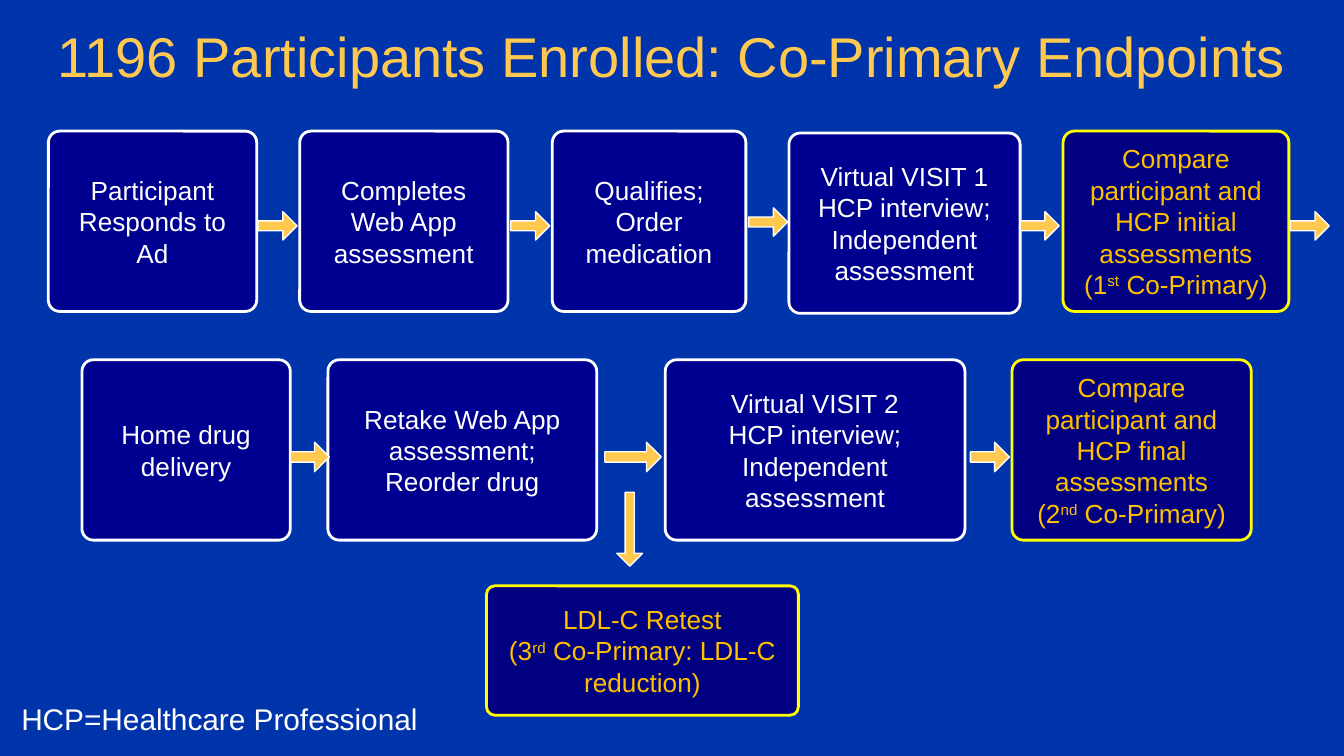
from pptx import Presentation
from pptx.dml.color import RGBColor as RGB
from pptx.enum.shapes import MSO_SHAPE as SHAPE
from pptx.enum.text import MSO_ANCHOR as ANCHOR, MSO_AUTO_SIZE as FIT, PP_ALIGN as ALIGN
from pptx.util import Inches, Pt

COLORS = {
    "background": "0034AA", "title": "FFC850", "white": "FFFFFF",
    "step": "000090", "endpoint": "000080", "endpoint_line": "FFFF00",
    "endpoint_text": "FFC000", "arrow": "FFC94F",
}
COLORS = {name: RGB.from_string(value) for name, value in COLORS.items()}

prs = Presentation()
prs.slide_width = Inches(10)
prs.slide_height = prs.slide_width * 9 // 16
COL, ROW = prs.slide_width / 100, prs.slide_height / 100  # 1 % of the slide
s = prs.slides.add_slide(prs.slide_layouts[6])
s.background.fill.solid()
s.background.fill.fore_color.rgb = COLORS["background"]


def add_block(kind, x, y, w, h, fill, line, weight, adjustments):
    """Add a filled preset shape, placed in percent of the slide."""
    sp = s.shapes.add_shape(kind, int(x * COL), int(y * ROW), int(w * COL), int(h * ROW))
    sp.shadow.inherit = False
    sp.fill.solid()
    sp.fill.fore_color.rgb = COLORS[fill]
    sp.line.color.rgb = COLORS[line]
    sp.line.width = Pt(weight)
    for i, value in enumerate(adjustments):
        sp.adjustments[i] = value
    return sp


def write(sp, text, size, color, align, **frame):
    """Write one paragraph per line; text between carets is superscript."""
    tf = sp.text_frame
    for name, value in ({"word_wrap": True} | frame).items():
        setattr(tf, name, value)
    for i, line in enumerate(text.split("\n")):
        p = tf.add_paragraph() if i else tf.paragraphs[0]
        p.alignment = align
        for j, part in enumerate(line.split("^")):
            r = p.add_run()
            r.text = part
            r.font.name, r.font.size = "Arial", Pt(size)
            r.font.color.rgb = COLORS[color]
            if j % 2:
                r._r.get_or_add_rPr().set("baseline", "30000")


# Process boxes: left, top, width, height, style, text
TOP, MIDDLE, BOTTOM, BOX_H = 17.35, 47.6, 77.5, 23.85
STYLES = {
    "step": ("step", "white", "white"),
    "endpoint": ("endpoint", "endpoint_line", "endpoint_text"),
}
BOXES = [
    (3.6, TOP, 15.5, BOX_H, "step", "Participant Responds to Ad"),
    (22.3, TOP, 15.5, BOX_H, "step", "Completes Web App assessment"),
    (41.1, TOP, 14.4, BOX_H, "step", "Qualifies; Order medication"),
    (58.7, TOP + 0.25, 17.2, BOX_H, "step",
     "Virtual VISIT 1\nHCP interview; Independent assessment"),
    (79.1, TOP, 16.8, BOX_H, "endpoint",
     "Compare participant and HCP initial assessments\n(1^st^ Co-Primary)"),
    (6.1, MIDDLE, 15.5, BOX_H, "step", "Home drug delivery"),
    (24.4, MIDDLE, 20, BOX_H, "step", "Retake Web App assessment; Reorder drug"),
    (36.2, BOTTOM, 23.2, 17.1, "endpoint",
     "LDL-C Retest\n(3^rd^ Co-Primary: LDL-C reduction)"),
    (49.5, MIDDLE, 22.3, BOX_H, "step",
     "Virtual VISIT 2\nHCP interview; Independent assessment"),
    (75.3, MIDDLE, 17.8, BOX_H, "endpoint",
     "Compare participant and HCP final assessments\n(2^nd^ Co-Primary)"),
]
MARGINS = {
    "margin_left": Inches(0.11), "margin_right": Inches(0.11),
    "margin_top": Inches(0.3), "margin_bottom": Inches(0.3),
}
for x, y, w, h, style, text in BOXES:
    fill, line, color = STYLES[style]
    sp = add_block(SHAPE.ROUNDED_RECTANGLE, x, y, w, h, fill, line, 1.5, [0.063])
    write(sp, text, 14, color, ALIGN.CENTER, vertical_anchor=ANCHOR.MIDDLE, **MARGINS)

title = s.shapes.add_textbox(0, int(1.95 * ROW), prs.slide_width, int(10.7 * ROW))
write(title, "1196 Participants Enrolled: Co-Primary Endpoints", 30, "title", ALIGN.CENTER)

# Arrows between the boxes: left, top, width, height, rotation
TOP_ARROW, MIDDLE_ARROW = 28, 58.5
ARROWS = [(x, TOP_ARROW, 2.9, 3.75, 0) for x in (19.2, 38, 75.9, 96)]
ARROWS += [(55.7, TOP_ARROW - 0.5, 2.9, 3.75, 0)]
ARROWS += [(x, MIDDLE_ARROW, w, 3.9, 0) for x, w in ((21.6, 2.9), (45, 4.2), (72.2, 2.9))]
ARROWS += [(44.1, 68.3, 5.5, 3.4, 90)]
for x, y, w, h, rotation in ARROWS:
    sp = add_block(SHAPE.RIGHT_ARROW, x, y, w, h, "arrow", "white", 0.75, [0.35, 0.5])
    sp.rotation = rotation

note = s.shapes.add_textbox(int(0.6 * COL), int(91.75 * ROW), int(32.5 * COL), int(6.6 * ROW))
write(note, "HCP=Healthcare Professional", 16, "white", ALIGN.LEFT,
      auto_size=FIT.SHAPE_TO_FIT_TEXT)

prs.save("out.pptx")
